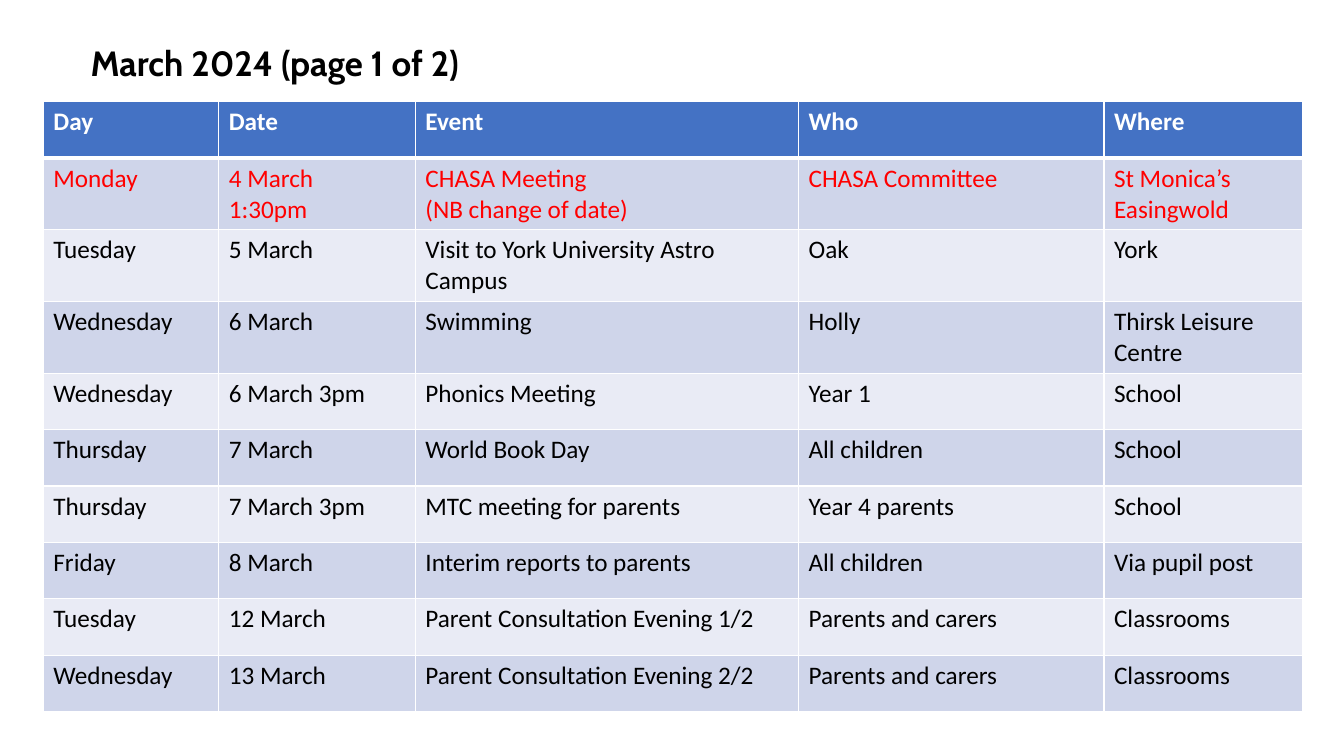
from lxml import etree
from pptx import Presentation
from pptx.dml.color import RGBColor
from pptx.enum.text import MSO_AUTO_SIZE
from pptx.oxml.ns import qn
from pptx.util import Inches, Pt

TITLE = "March 2024 (page 1 of 2)"
EVENTS = [
    ("Day", "Date", "Event", "Who", "Where"),
    ("Monday", "4 March\n1:30pm", "CHASA Meeting\n(NB change of date)",
     "CHASA Committee", "St Monica’s Easingwold"),
    ("Tuesday", "5 March", "Visit to York University Astro Campus", "Oak", "York"),
    ("Wednesday", "6 March", "Swimming", "Holly", "Thirsk Leisure Centre"),
    ("Wednesday", "6 March 3pm", "Phonics Meeting", "Year 1", "School"),
    ("Thursday", "7 March", "World Book Day", "All children", "School"),
    ("Thursday", "7 March 3pm", "MTC meeting for parents", "Year 4 parents", "School"),
    ("Friday", "8 March", "Interim reports to parents", "All children", "Via pupil post"),
    ("Tuesday", "12 March", "Parent Consultation Evening 1/2", "Parents and carers", "Classrooms"),
    ("Wednesday", "13 March", "Parent Consultation Evening 2/2", "Parents and carers", "Classrooms"),
]
COLUMN_WIDTHS = (1.74, 1.95, 3.8, 3.03, 1.97)
ROW_HEIGHT = 0.56
HEADER_ROW, CHANGED_ROW = 0, 1

WHITE = RGBColor(0xFF, 0xFF, 0xFF)
BLACK = RGBColor(0x00, 0x00, 0x00)
RED = RGBColor(0xFF, 0x00, 0x00)
HEADER_BLUE = RGBColor(0x44, 0x72, 0xC4)
BAND_DARK = RGBColor(0xCF, 0xD5, 0xEA)
BAND_LIGHT = RGBColor(0xE9, 0xEB, 0xF5)


def style_text(tf, font, size, color, bold):
    for p in tf.paragraphs:
        for r in p.runs:
            r.font.name = font
            r.font.size = Pt(size)
            r.font.color.rgb = color
            r.font.bold = bold


def set_borders(cell, top, bottom):
    tc_pr = cell._tc.get_or_add_tcPr()
    for side, width in (("lnL", 1), ("lnR", 1), ("lnT", top), ("lnB", bottom)):
        ln = etree.SubElement(tc_pr, qn("a:" + side), w=str(Pt(width)))
        fill = etree.SubElement(ln, qn("a:solidFill"))
        etree.SubElement(fill, qn("a:srgbClr"), val=str(WHITE))


def row_style(row):
    if row == HEADER_ROW:
        return HEADER_BLUE, WHITE
    band = BAND_DARK if row % 2 else BAND_LIGHT
    return band, RED if row == CHANGED_ROW else BLACK


def add_events(slide):
    frame = slide.shapes.add_table(
        len(EVENTS), len(COLUMN_WIDTHS), Inches(0.43), Inches(1.01),
        Inches(sum(COLUMN_WIDTHS)), Inches(ROW_HEIGHT * len(EVENTS)))
    table = frame.table
    for column, width in zip(table.columns, COLUMN_WIDTHS):
        column.width = Inches(width)
    for i, event in enumerate(EVENTS):
        table.rows[i].height = Inches(ROW_HEIGHT)
        band, color = row_style(i)
        top = 3 if i == HEADER_ROW + 1 else 1
        bottom = 3 if i == HEADER_ROW else 1
        for j, text in enumerate(event):
            cell = table.cell(i, j)
            set_borders(cell, top, bottom)
            cell.fill.solid()
            cell.fill.fore_color.rgb = band
            cell.text_frame.text = text
            style_text(cell.text_frame, "Calibri", 18, color, i == HEADER_ROW)


def add_title(slide):
    box = slide.shapes.add_textbox(Inches(0.8), Inches(0.36), Inches(4.45), Inches(0.52))
    tf = box.text_frame
    tf.word_wrap = True
    tf.auto_size = MSO_AUTO_SIZE.SHAPE_TO_FIT_TEXT
    tf.text = TITLE
    style_text(tf, "Cabin", 25, BLACK, True)


def main():
    prs = Presentation()
    prs.slide_width, prs.slide_height = Inches(13.33), Inches(7.5)
    slide = prs.slides.add_slide(prs.slide_layouts[6])
    add_events(slide)
    add_title(slide)
    prs.save("out.pptx")


if __name__ == "__main__":
    main()
